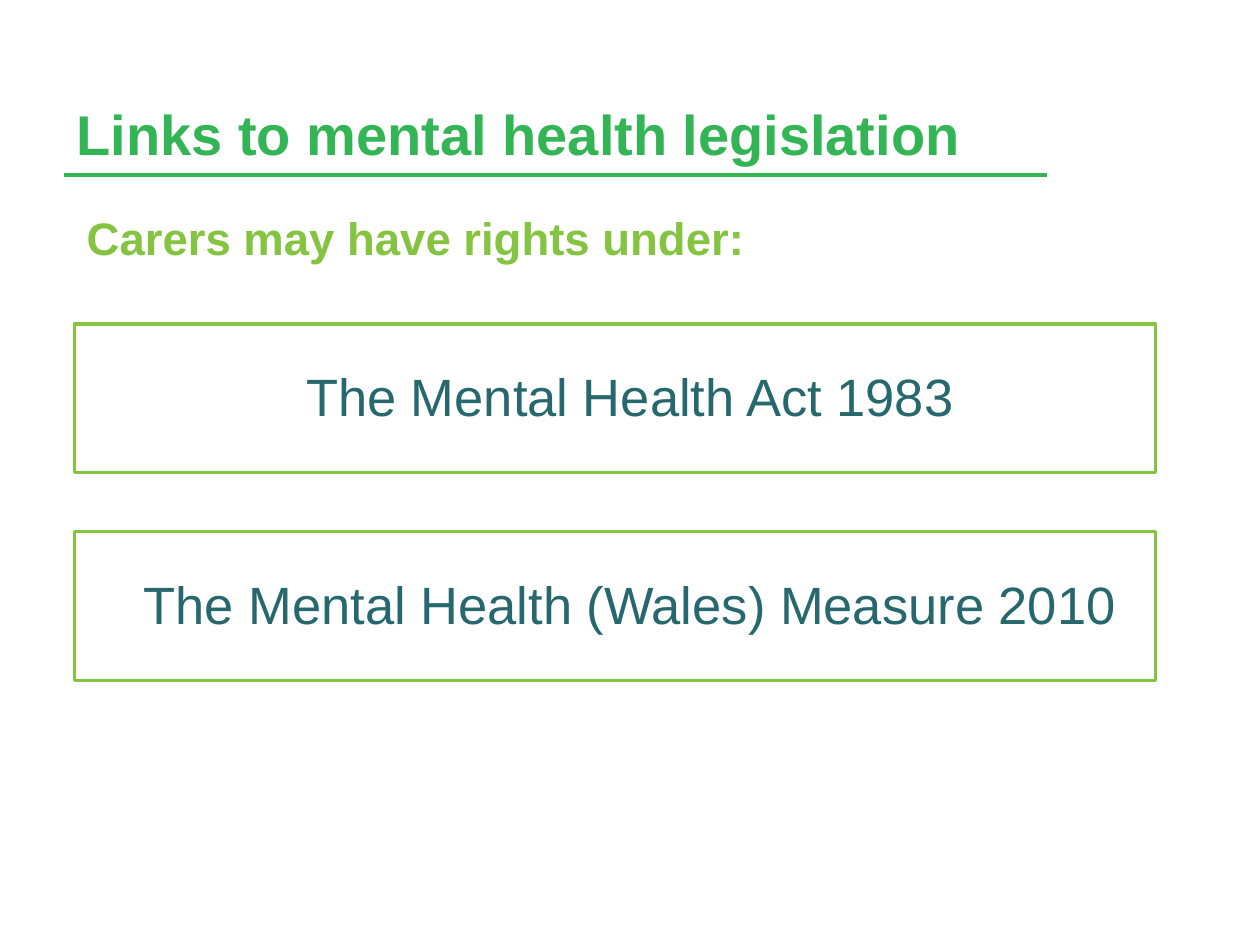
import pptx
import pptx.util
import pptx.dml.color
import pptx.enum.shapes
import pptx.enum.text
import lxml.etree

Inches = pptx.util.Inches
Pt = pptx.util.Pt
RGBColor = pptx.dml.color.RGBColor
Align = pptx.enum.text.PP_ALIGN
Anchor = pptx.enum.text.MSO_ANCHOR

GREEN = RGBColor(0x34, 0xB5, 0x55)
LIME = RGBColor(0x85, 0xC4, 0x41)
TEAL = RGBColor(0x26, 0x68, 0x6D)


def add_text(slide, text, left, top, width, height, size, color, bold=False):
    box = slide.shapes.add_textbox(Inches(left), Inches(top), Inches(width), Inches(height))
    frame = box.text_frame
    frame.word_wrap = True
    frame.text = text
    font = frame.paragraphs[0].runs[0].font
    font.name = "Arial"
    font.size = Pt(size)
    font.bold = bold
    font.color.rgb = color
    return frame


deck = pptx.Presentation()
deck.slide_width = Inches(10)
deck.slide_height = Inches(7.5)
slide = deck.slides.add_slide(deck.slide_layouts[6])

rule = slide.shapes.add_connector(
    pptx.enum.shapes.MSO_CONNECTOR.STRAIGHT,
    Inches(0.51), Inches(1.39), Inches(8.31), Inches(1.39))
rule.line.color.rgb = GREEN
rule.line.width = Pt(2)
lxml.etree.SubElement(rule.element.spPr, pptx.oxml.ns.qn("a:effectLst"))

title = add_text(slide, "Links to mental health legislation",
                 0.51, 0.28, 7.8, 1.09, 32, GREEN, True)
title.vertical_anchor = Anchor.BOTTOM

add_text(slide, "Carers may have rights under:", 0.59, 1.62, 8.03, 0.54, 26, LIME, True)

laws = [
    ("The Mental Health Act 1983", 0.79),
    ("The Mental Health (Wales) Measure 2010", 0.63),
]
for row, (law, height) in enumerate(laws):
    top = 2.57 + 1.65 * row
    frame = add_text(slide, law, 0.59, top + 0.24, 8.82, height, 30, TEAL)
    frame.margin_top = Inches(0.08)
    frame.paragraphs[0].alignment = Align.CENTER
    border = slide.shapes.add_shape(
        pptx.enum.shapes.MSO_SHAPE.RECTANGLE,
        Inches(0.59), Inches(top), Inches(8.58), Inches(1.18))
    border.shadow.inherit = False
    border.fill.background()
    border.line.color.rgb = LIME
    border.line.width = Pt(2)

deck.save("out.pptx")
